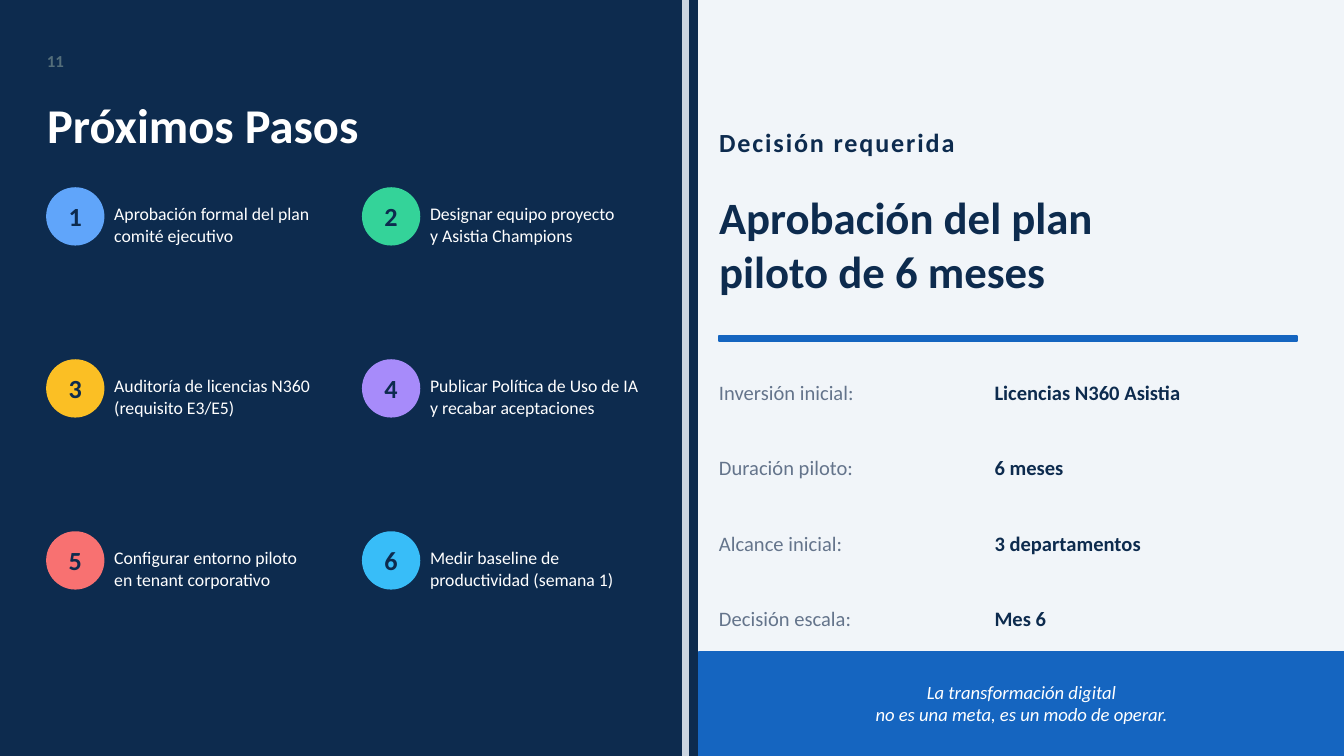
from pptx import Presentation
from pptx.dml.color import RGBColor
from pptx.enum import shapes, text
from pptx.util import Inches, Pt

NAVY = RGBColor(0x0D, 0x2B, 0x4E)
BLUE = RGBColor(0x15, 0x65, 0xC0)
WHITE = RGBColor(0xFF, 0xFF, 0xFF)
PANEL = RGBColor(0xF1, 0xF5, 0xF9)
DIVIDER = RGBColor(0xCB, 0xD5, 0xE1)
MUTED = RGBColor(0x54, 0x6E, 0x7A)
SLATE = RGBColor(0x64, 0x74, 0x8B)
SKY = RGBColor(0x60, 0xA5, 0xFA)
GREEN = RGBColor(0x34, 0xD3, 0x99)
AMBER = RGBColor(0xFB, 0xBF, 0x24)
VIOLET = RGBColor(0xA7, 0x8B, 0xFA)
CORAL = RGBColor(0xF8, 0x71, 0x71)
CYAN = RGBColor(0x38, 0xBD, 0xF8)

FONT = "Calibri"
WIDTH = 10
HEIGHT = WIDTH * 9 / 16
RECT = shapes.MSO_SHAPE.RECTANGLE
OVAL = shapes.MSO_SHAPE.OVAL
LEFT, CENTER = text.PP_ALIGN.LEFT, text.PP_ALIGN.CENTER

STEPS = [
    (SKY, "Aprobación formal del plan\ncomité ejecutivo"),
    (GREEN, "Designar equipo proyecto\ny Asistia Champions"),
    (AMBER, "Auditoría de licencias N360\n(requisito E3/E5)"),
    (VIOLET, "Publicar Política de Uso de IA\ny recabar aceptaciones"),
    (CORAL, "Configurar entorno piloto\nen tenant corporativo"),
    (CYAN, "Medir baseline de\nproductividad (semana 1)"),
]
FACTS = [
    ("Inversión inicial:", "Licencias N360 Asistia"),
    ("Duración piloto:", "6 meses"),
    ("Alcance inicial:", "3 departamentos"),
    ("Decisión escala:", "Mes 6"),
]


def write(sp, content, size, color, align=LEFT, spacing=None, **style):
    """Fill a shape with one paragraph per line of content."""
    tf = sp.text_frame
    frame = dict(word_wrap=True, auto_size=text.MSO_AUTO_SIZE.NONE,
                 vertical_anchor=text.MSO_ANCHOR.MIDDLE, margin_left=0,
                 margin_right=0, margin_top=0, margin_bottom=0)
    for name, value in frame.items():
        setattr(tf, name, value)
    tf.text = content
    for p in tf.paragraphs:
        p.alignment = align
        for r in p.runs:
            r.font.color.rgb = color
            for name, value in dict(style, name=FONT, size=Pt(size)).items():
                setattr(r.font, name, value)
            if spacing:
                r.font._element.set("spc", str(spacing * 100))


def add_text(s, box, content, size, color, **style):
    sp = s.shapes.add_textbox(*map(Inches, box))
    write(sp, content, size, color, **style)


def add_block(s, kind, box, color):
    sp = s.shapes.add_shape(kind, *map(Inches, box))
    sp.shadow.inherit = False
    sp.fill.solid()
    sp.fill.fore_color.rgb = color
    sp.line.color.rgb = color
    sp.line.width = Pt(1)


def add_title(s, box, content):
    sp = s.shapes.title
    sp.left, sp.top, sp.width, sp.height = map(Inches, box)
    write(sp, content, 26, WHITE, bold=True)


def add_steps(s):
    """Numbered circles in two columns and three rows."""
    for i, (color, label) in enumerate(STEPS):
        row, col = divmod(i, 2)
        x, y = 0.35 + col * 2.35, 1.4 + row * 1.28
        add_block(s, OVAL, (x, y, 0.42, 0.42), color)
        add_text(s, (x, y + 0.02, 0.42, 0.38), str(i + 1), 14, NAVY,
                 align=CENTER, bold=True)
        add_text(s, (x + 0.5, y + 0.02, 1.75, 0.5), label, 9.5, WHITE)


def add_facts(s):
    """Label and value pairs below the rule."""
    for i, (label, value) in enumerate(FACTS):
        y = 2.7 + i * 0.56
        add_text(s, (5.35, y, 2, 0.44), label, 11, SLATE)
        add_text(s, (7.4, y, 2.2, 0.44), value, 11, NAVY, bold=True)


def main():
    prs = Presentation()
    prs.slide_width, prs.slide_height = Inches(WIDTH), Inches(HEIGHT)
    s = prs.slides.add_slide(prs.slide_layouts[5])
    s.background.fill.solid()
    s.background.fill.fore_color.rgb = NAVY

    # Left side: next steps
    add_block(s, RECT, (5.2, 0, 4.8, HEIGHT), PANEL)
    add_text(s, (0.35, 0.28, 0.5, 0.35), "11", 9, MUTED, bold=True)
    add_title(s, (0.35, 0.65, 4.65, 0.55), "Próximos Pasos")
    add_steps(s)
    add_block(s, RECT, (5.08, 0, 0.04, HEIGHT), DIVIDER)

    # Right side: decision
    add_text(s, (5.35, 0.85, 4.35, 0.42), "Decisión requerida", 14, NAVY,
             bold=True, spacing=1)
    add_text(s, (5.35, 1.35, 4.35, 0.92),
             "Aprobación del plan\npiloto de 6 meses", 24, NAVY, bold=True)
    add_block(s, RECT, (5.35, 2.5, 4.3, 0.04), BLUE)
    add_facts(s)

    # Closing message
    add_block(s, RECT, (5.2, 4.85, 4.8, HEIGHT - 4.85), BLUE)
    add_text(s, (5.3, 4.87, 4.6, 0.72),
             "La transformación digital\nno es una meta, es un modo de operar.",
             10, WHITE, align=CENTER, italic=True)

    prs.save("out.pptx")


if __name__ == "__main__":
    main()
